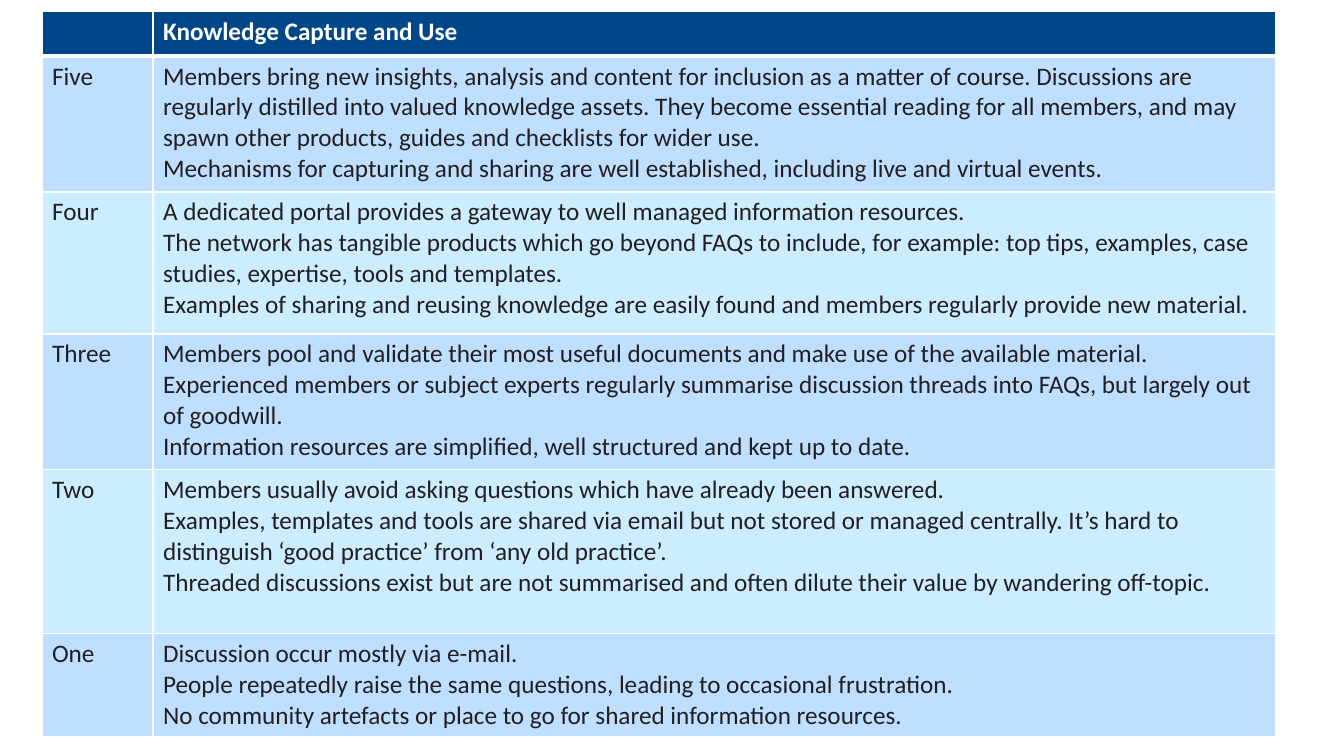
import pptx
import pptx.dml.color
import pptx.oxml
import pptx.oxml.ns
import pptx.util
from dataclasses import dataclass

PX = 914400 / 100.8


@dataclass(frozen=True)
class Theme:
    font: str = "Calibri"
    size: int = 18
    head: str = "00478A"
    bands: tuple = ("BEDFFF", "CCECFF")
    ink: str = "231F20"
    white: str = "FFFFFF"
    thin: int = 1
    thick: int = 3


THEME = Theme()

TITLE = "Knowledge Capture and Use"
LEVELS = [
    ("Five", [
        "Members bring new insights, analysis and content for inclusion as a matter of course. "
        "Discussions are regularly distilled into valued knowledge assets. They become essential "
        "reading for all members, and may spawn other products, guides and checklists for wider use.",
        "Mechanisms for capturing and sharing are well established, including live and virtual events.",
    ]),
    ("Four", [
        "A dedicated portal provides a gateway to well managed information resources.",
        "The network has tangible products which go beyond FAQs to include, for example: top tips, "
        "examples, case studies, expertise, tools and templates.",
        "Examples of sharing and reusing knowledge are easily found and members regularly provide "
        "new material.",
    ]),
    ("Three", [
        "Members pool and validate their most useful documents and make use of the available material.",
        "Experienced members or subject experts regularly summarise discussion threads into FAQs, "
        "but largely out of goodwill.",
        "Information resources are simplified, well structured and kept up to date.",
    ]),
    ("Two", [
        "Members usually avoid asking questions which have already been answered.",
        "Examples, templates and tools are shared via email but not stored or managed centrally. "
        "It’s hard to distinguish ‘good practice’ from ‘any old practice’.",
        "Threaded discussions exist but are not summarised and often dilute their value by "
        "wandering off-topic.",
    ]),
    ("One", [
        "Discussion occur mostly via e-mail.",
        "People repeatedly raise the same questions, leading to occasional frustration.",
        "No community artefacts or place to go for shared information resources.",
    ]),
]

LEFT, TOP = 42, 11
WIDTHS = [111, 1123]
HEIGHTS = [45, 136, 142, 136, 164, 102]


def px(count):
    return pptx.util.Emu(round(count * PX))


def rgb(code):
    return pptx.dml.color.RGBColor.from_string(code)


def write(frame, lines, color=THEME.ink, bold=False):
    """Put one paragraph per line into a text frame."""
    for i, line in enumerate(lines):
        para = frame.add_paragraph() if i else frame.paragraphs[0]
        run = para.add_run()
        run.text = line
        font = run.font
        font.name, font.size, font.bold = THEME.font, pptx.util.Pt(THEME.size), bold
        font.color.rgb = rgb(color)


def edge(cell, **sides):
    """Draw cell borders; each keyword is a side (L, R, T, B) and its width in points."""
    props = cell._tc.get_or_add_tcPr()
    space = pptx.oxml.ns.nsdecls("a")
    for i, side in enumerate("LRTB"):
        width = pptx.util.Pt(sides.get(side, THEME.thin))
        props.insert(i, pptx.oxml.parse_xml(
            f'<a:ln{side} {space} w="{width}"><a:solidFill>'
            f'<a:srgbClr val="{THEME.white}"/></a:solidFill></a:ln{side}>'))


def paint(cell, color, **sides):
    cell.fill.solid()
    cell.fill.fore_color.rgb = rgb(color)
    edge(cell, **sides)


def add_grid(slide):
    frame = slide.shapes.add_table(len(HEIGHTS), len(WIDTHS), px(LEFT), px(TOP),
                                   px(sum(WIDTHS)), px(sum(HEIGHTS)))
    grid = frame.table
    for col, width in zip(grid.columns, WIDTHS):
        col.width = px(width)
    for row, height in zip(grid.rows, HEIGHTS):
        row.height = px(height)
    return grid


def fill_head(grid):
    for cell in grid.rows[0].cells:
        paint(cell, THEME.head, B=THEME.thick)
    write(grid.cell(0, 1).text_frame, [TITLE], color=THEME.white, bold=True)


def fill_levels(grid):
    for i, (level, lines) in enumerate(LEVELS):
        for col, text in enumerate(([level], lines)):
            cell = grid.cell(i + 1, col)
            paint(cell, THEME.bands[i % 2], T=THEME.thin if i else THEME.thick)
            write(cell.text_frame, text)


def main():
    deck = pptx.Presentation()
    deck.slide_width, deck.slide_height = px(1344), px(756)
    slide = deck.slides.add_slide(deck.slide_layouts[6])
    grid = add_grid(slide)
    fill_head(grid)
    fill_levels(grid)
    deck.save("out.pptx")


if __name__ == "__main__":
    main()
